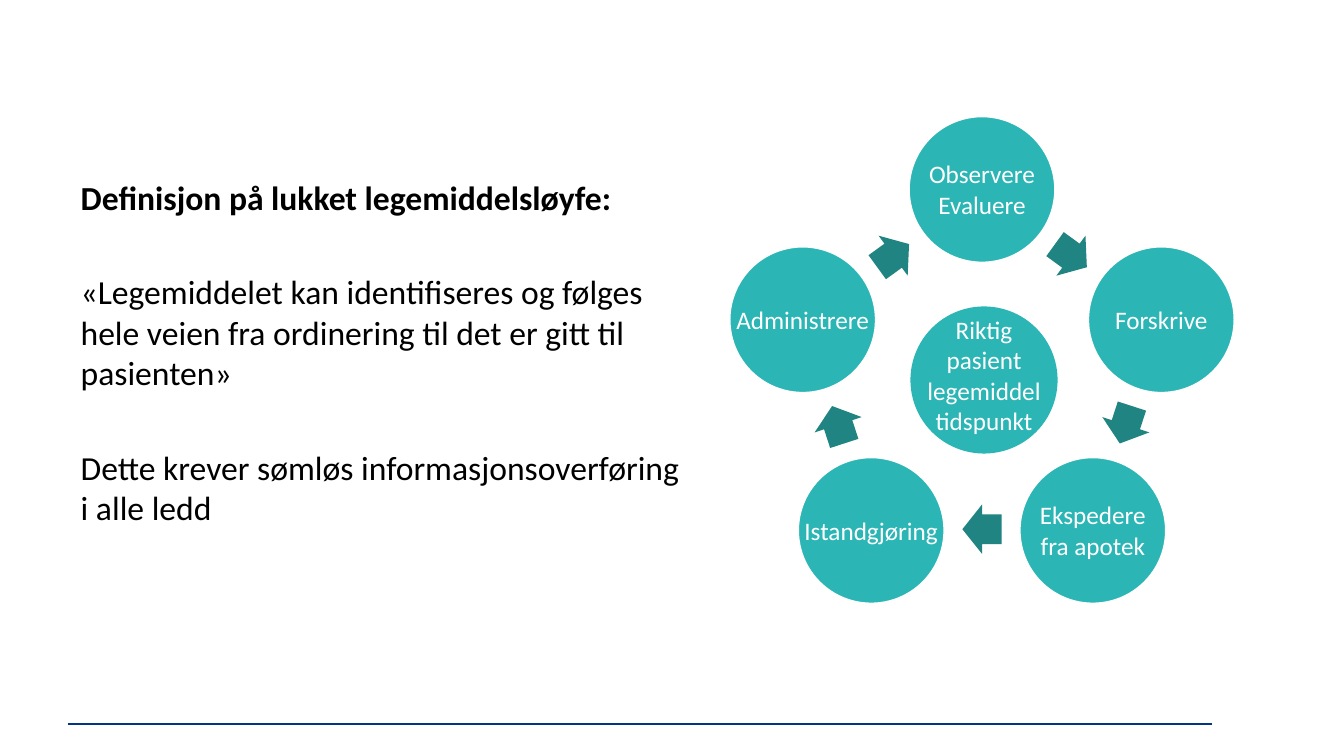
import math
import pptx
import pptx.util
import pptx.dml.color
import pptx.enum.shapes
import pptx.enum.text
import pptx.oxml.ns
import lxml.etree

Inch = pptx.util.Inches
Kind = pptx.enum.shapes.MSO_SHAPE
Fit = pptx.enum.text.MSO_AUTO_SIZE
Align = pptx.enum.text.PP_ALIGN


def tint(code):
    return pptx.dml.color.RGBColor.from_string(code)


def draw(kind, mid, size, code):
    left, top = mid[0] - size[0] / 2, mid[1] - size[1] / 2
    item = page.shapes.add_shape(kind, Inch(left), Inch(top), Inch(size[0]), Inch(size[1]))
    item.shadow.inherit = False
    item.fill.solid()
    item.fill.fore_color.rgb = tint(code)
    item.line.fill.background()
    return item


deck = pptx.Presentation()
deck.slide_width, deck.slide_height = Inch(13.33), Inch(7.5)
page = deck.slides.add_slide(deck.slide_layouts[1])
title = page.shapes.title
title.element.getparent().remove(title.element)

rule = page.shapes.add_connector(
    pptx.enum.shapes.MSO_CONNECTOR.STRAIGHT, Inch(0.67), Inch(7.18), Inch(12.02), Inch(7.18))
rule.line.color.rgb = tint("043585")
rule.line.width = pptx.util.Pt(1.25)
lxml.etree.SubElement(rule.element.spPr, pptx.oxml.ns.qn("a:effectLst"))

body = page.placeholders[1]
place = {"left": 0.7, "top": 1.7, "width": 6.16, "height": 3.89}
for name, size in place.items():
    setattr(body, name, Inch(size))
frame = body.text_frame
frame.auto_size = Fit.NONE
frame.word_wrap = True
frame.vertical_anchor = pptx.enum.text.MSO_ANCHOR.TOP
lines = [
    "Definisjon på lukket legemiddelsløyfe:",
    "«Legemiddelet kan identifiseres og følges hele veien fra ordinering til det er gitt til pasienten»",
    "Dette krever sømløs informasjonsoverføring i alle ledd",
]
frame.text = "\n".join(lines)
for row, para in enumerate(frame.paragraphs):
    props = para._p.get_or_add_pPr()
    props.set("marL", "0")
    props.set("indent", "0")
    lxml.etree.SubElement(props, pptx.oxml.ns.qn("a:buNone"))
    para.space_before = pptx.util.Pt(39 if row else 0)
    style = {"name": "Calibri", "size": pptx.util.Pt(24), "bold": row == 0}
    for name, value in style.items():
        setattr(para.font, name, value)
    para.font.color.rgb = tint("000000")

hub = (9.74, 3.75)
steps = ["Observere\nEvaluere", "Forskrive", "Ekspedere fra apotek", "Istandgjøring", "Administrere"]
turn = 360 / len(steps)
disc = (1.46, 1.46)
labels = []
for step, words in enumerate(steps):
    angle = math.radians(step * turn)
    mid = (hub[0] + 1.87 * math.sin(angle), hub[1] - 1.87 * math.cos(angle))
    ball = draw(Kind.OVAL, mid, disc, "2CB5B5")
    ball.line.color.rgb = tint("FFFFFF")
    ball.line.width = pptx.util.Pt(2)
    tall = 0.71 if " " in words or "\n" in words else 0.4
    labels.append((words, mid, tall))

    tilt = (step + 0.5) * turn
    angle = math.radians(tilt)
    mid = (hub[0] + 1.5 * math.sin(angle), hub[1] - 1.5 * math.cos(angle))
    arrow = draw(Kind.RIGHT_ARROW, mid, (0.39, 0.49), "208482")
    arrow.adjustments[0], arrow.adjustments[1] = 0.6, 0.5
    arrow.rotation = tilt

draw(Kind.OVAL, (9.76, 3.77), disc, "2CB5B5")
labels.append(("Riktig\npasient\nlegemiddel\ntidspunkt", (9.76, 3.88), 1.62))

for words, mid, tall in labels:
    box = page.shapes.add_textbox(
        Inch(mid[0] - 0.77), Inch(mid[1] - tall / 2), Inch(1.54), Inch(tall))
    frame = box.text_frame
    frame.word_wrap = True
    frame.auto_size = Fit.SHAPE_TO_FIT_TEXT
    frame.text = words
    for para in frame.paragraphs:
        para.alignment = Align.CENTER
        style = {"name": "Calibri", "size": pptx.util.Pt(18)}
        for name, value in style.items():
            setattr(para.font, name, value)
        para.font.color.rgb = tint("FFFFFF")

deck.save("out.pptx")
